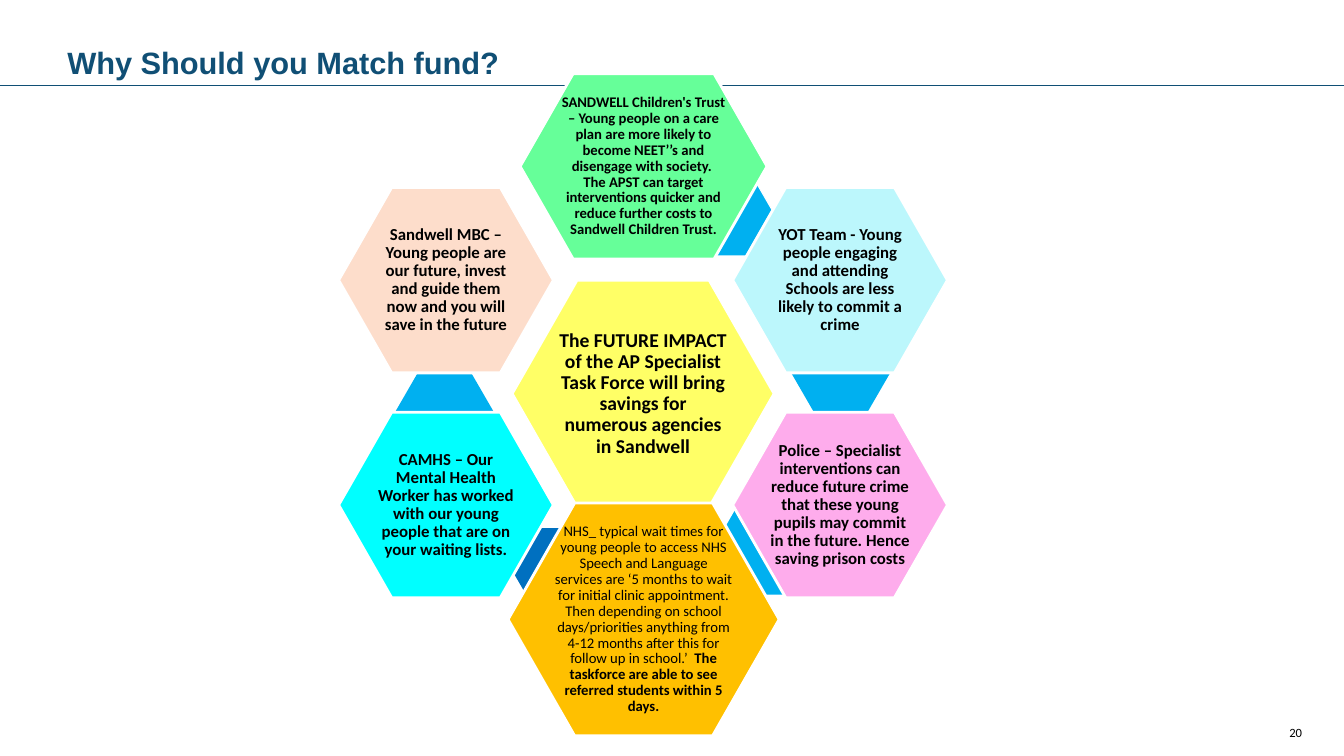
from lxml import etree
from pptx import Presentation
from pptx.dml.color import RGBColor
from pptx.enum import shapes, text
from pptx.oxml import ns
from pptx.util import Pt

NAVY = RGBColor(0x10, 0x4F, 0x75)
BLACK = RGBColor(0, 0, 0)
WHITE = RGBColor(0xFF, 0xFF, 0xFF)
YELLOW = RGBColor(0xFF, 0xFF, 0x66)
GREEN = RGBColor(0x66, 0xFF, 0x99)
PALE_BLUE = RGBColor(0xBC, 0xF7, 0xFC)
PINK = RGBColor(0xFE, 0xAC, 0xEC)
AMBER = RGBColor(0xFF, 0xC0, 0x00)
CYAN = RGBColor(0x00, 0xFF, 0xFF)
PEACH = RGBColor(0xFD, 0xDD, 0xCB)
SKY = RGBColor(0x00, 0xB0, 0xF0)
BLUE = RGBColor(0x00, 0x70, 0xC0)

presentation = Presentation()
presentation.slide_width, presentation.slide_height = Pt(960), Pt(540)
slide = presentation.slides.add_slide(presentation.slide_layouts[6])


def add_hexagon(left, top, width, height, fill, line_width, adjust):
    shape = slide.shapes.add_shape(
        shapes.MSO_SHAPE.HEXAGON, Pt(left), Pt(top), Pt(width), Pt(height))
    shape.adjustments[0] = adjust
    shape.adjustments[1] = 1.1547
    shape.shadow.inherit = False
    shape.fill.solid()
    shape.fill.fore_color.rgb = fill
    if line_width:
        shape.line.color.rgb = WHITE
        shape.line.width = Pt(line_width)
    else:
        shape.line.fill.background()


def add_text(left, top, width, height, runs, size, font="Calibri", color=BLACK,
             anchor=text.MSO_ANCHOR.MIDDLE, align=text.PP_ALIGN.CENTER):
    box = slide.shapes.add_textbox(Pt(left), Pt(top), Pt(width), Pt(height))
    frame = box.text_frame
    frame.word_wrap = True
    frame.vertical_anchor = anchor
    paragraph = frame.paragraphs[0]
    paragraph.alignment = align
    for words, bold in runs:
        run = paragraph.add_run()
        run.text = words
        run.font.size = Pt(size)
        run.font.name = font
        run.font.bold = bold
        run.font.color.rgb = color
    return frame


# Header rule, title and page number
rule = slide.shapes.add_connector(
    shapes.MSO_CONNECTOR.STRAIGHT, 0, Pt(61.2), Pt(960), Pt(61.2))
rule.line.color.rgb = NAVY
rule.line.width = Pt(1)
etree.SubElement(rule._element.spPr, ns.qn("a:effectLst"))
add_text(907, 517, 37, 12, [("20", False)], 9)
add_text(41, 9.4, 879, 51.8, [("Why Should you Match fund?", True)], 22, "Arial", NAVY,
         text.MSO_ANCHOR.BOTTOM, text.PP_ALIGN.LEFT)

# Agencies, back to front: small link hexagon behind each (left, top, fill, line),
# then hexagon position and size, fill, text width share, text size, runs
LEFT_COLUMN, RIGHT_COLUMN = 241.9, 523.4
UPPER_ROW, LOWER_ROW = 133.9, 294.5
SIDE_SIZE = (153.4, 132.5)
agencies = [
    (None, (365.8, 200.2, 187.2, 162), YELLOW, 0.67, 14,
     [("The FUTURE IMPACT of the AP Specialist Task Force will bring savings for "
       "numerous agencies in Sandwell", True)]),
    ((482.4, 122.4, SKY, 0.75), (371.5, 52.6, 176.4, 132.5), GREEN, 0.69, 10.5,
     [("SANDWELL Children's Trust – Young people on a care plan are more likely to "
       "become NEET’’s and disengage with society.  The APST can target interventions "
       "quicker and reduce further costs to Sandwell Children Trust.", True)]),
    ((565.2, 236.2, SKY, 0), (RIGHT_COLUMN, UPPER_ROW, *SIDE_SIZE), PALE_BLUE, 0.67, 12,
     [("YOT Team - Young people engaging and attending Schools are less likely to "
       "commit a crime", True)]),
    ((507.6, 364.3, SKY, 0), (RIGHT_COLUMN, LOWER_ROW, *SIDE_SIZE), PINK, 0.67, 12,
     [("Police – Specialist interventions can reduce future crime that these young "
       "pupils may commit in the future. Hence saving prison costs", True)]),
    ((365.8, 377.3, BLUE, 0), (362.9, 359.3, 193.7, 166.3), AMBER, 0.67, 10.5,
     [("NHS_ typical wait times for young people to access NHS Speech and Language "
       "services are ‘5 months to wait for initial clinic appointment. Then depending "
       "on school days/priorities anything from 4-12 months after this for follow up "
       "in school.’ ", False),
      (" The taskforce are able to see referred students within 5 days.", True)]),
    ((282.2, 264.2, SKY, 0), (LEFT_COLUMN, LOWER_ROW, *SIDE_SIZE), CYAN, 0.67, 12,
     [("CAMHS – Our Mental Health Worker has worked with our young people that are on "
       "your waiting lists.", True)]),
    (None, (LEFT_COLUMN, UPPER_ROW, *SIDE_SIZE), PEACH, 0.67, 12,
     [("Sandwell MBC – Young people are our future, invest and guide them now and you "
       "will save in the future", True)]),
]
for link, (left, top, width, height), fill, share, size, runs in agencies:
    if link:
        link_left, link_top, link_fill, link_line = link
        add_hexagon(link_left, link_top, 70.6, 60.5, link_fill, link_line, 0.289)
    add_hexagon(left, top, width, height, fill, 2, 0.286)

    # Label centred on its hexagon
    margin = (1 - share) / 2
    frame = add_text(left + margin * width, top + margin * height,
                     share * width, share * height, runs, size)
    frame.margin_left = frame.margin_right = Pt(1.4)
    frame.margin_top = frame.margin_bottom = Pt(1.4)
    frame.paragraphs[0].line_spacing = 0.9
    frame.paragraphs[0].space_after = Pt(round(0.35 * size, 1))

presentation.save("out.pptx")
